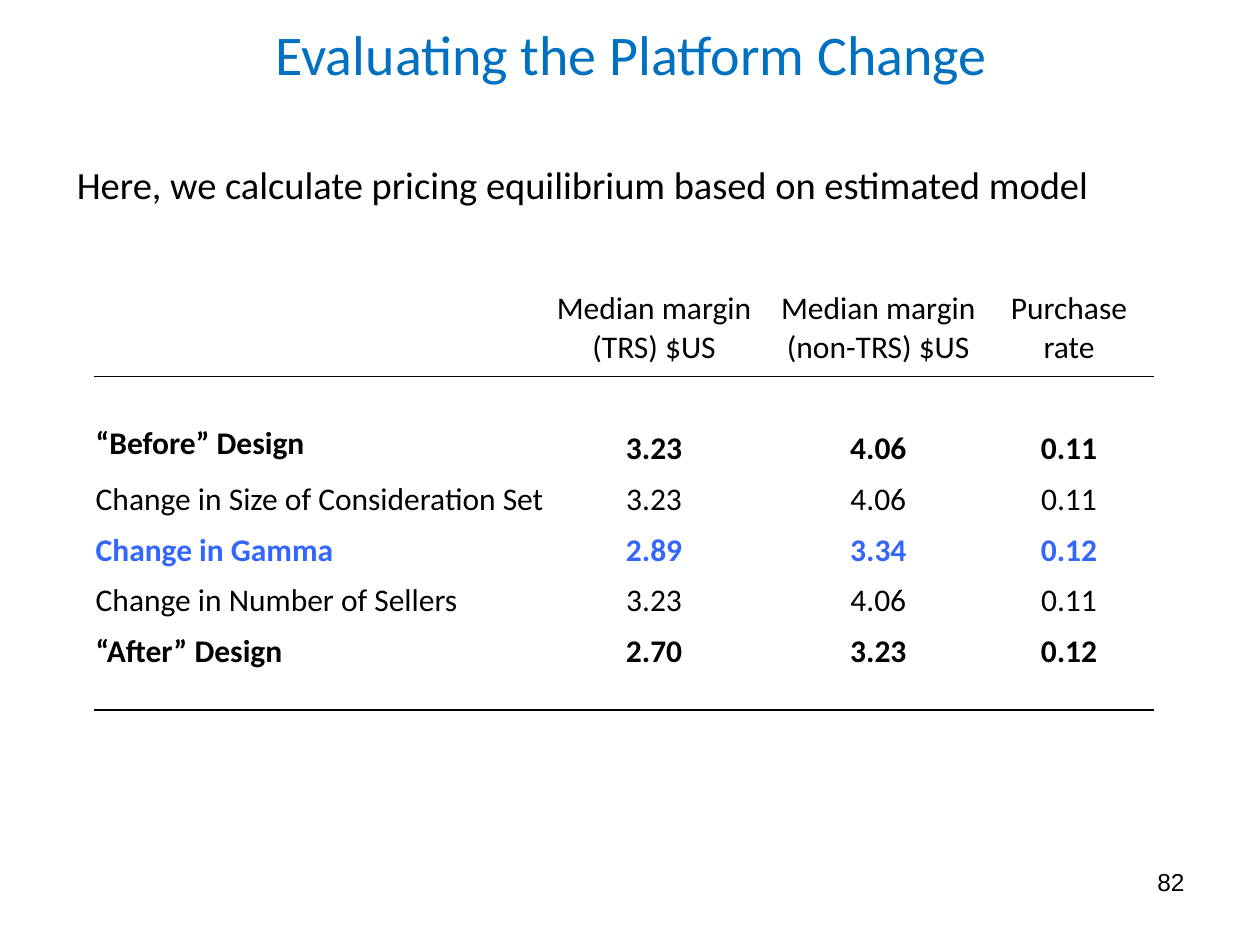
from lxml.etree import SubElement
from pptx import Presentation
from pptx.dml.color import RGBColor
from pptx.enum.text import MSO_ANCHOR, PP_ALIGN
from pptx.oxml.ns import qn
from pptx.util import Cm, Pt

BLACK, BLUE, TITLE_BLUE = "000000", "3366FF", "0070C0"
COLUMN_WIDTHS = [9.14, 4.29, 0.23, 4.29, 3.4]
ROW_HEIGHTS = [1.98, 0.83] + [1.02] * 5 + [0.77]
HEADER = ["", "Median margin (TRS) $US", "", "Median margin\n(non-TRS) $US", "Purchase\nrate"]
DESIGNS = [
    ("“Before” Design", "3.23", "4.06", "0.11", BLACK, True),
    ("Change in Size of Consideration Set", "3.23", "4.06", "0.11", BLACK, False),
    ("Change in Gamma", "2.89", "3.34", "0.12", BLUE, True),
    ("Change in Number of Sellers", "3.23", "4.06", "0.11", BLACK, False),
    ("“After” Design", "2.70", "3.23", "0.12", BLACK, True),
]


def color(value):
    return RGBColor.from_string(value)


class SlideBuilder:
    """Holds the font style and the current slide, and adds elements to it."""

    def __init__(self, slide, font_name):
        self.slide = slide
        self.font_name = font_name

    def fill_text(self, frame, text, size, ink=BLACK, align=PP_ALIGN.LEFT, bold=False, font_name=None):
        frame.text = text
        for paragraph in frame.paragraphs:
            paragraph.alignment = align
            font = paragraph.font
            font.name = font_name or self.font_name
            font.size = Pt(size)
            font.bold = bold
            font.color.rgb = color(ink)

    def text(self, box, text, size, anchor=MSO_ANCHOR.TOP, wrap=True, **style):
        shape = self.slide.shapes.add_textbox(*map(Cm, box))
        shape.text_frame.word_wrap = wrap
        shape.text_frame.vertical_anchor = anchor
        self.fill_text(shape.text_frame, text, size, **style)

    def table(self, left, top, widths, heights):
        table = self.slide.shapes.add_table(
            len(heights), len(widths), Cm(left), Cm(top), Cm(sum(widths)), Cm(sum(heights))
        ).table
        table.first_row = table.horz_banding = False
        for column, width in zip(table.columns, widths):
            column.width = Cm(width)
        for row, height in zip(table.rows, heights):
            row.height = Cm(height)
        for cell in table.iter_cells():
            cell.margin_left = cell.margin_right = cell.margin_top = Cm(0.03)
            cell.margin_bottom = 0
            self.fill_text(cell.text_frame, "", 18)
        return table

    def cell(self, cell, text, anchor, **style):
        cell.vertical_anchor = anchor
        self.fill_text(cell.text_frame, text, 18, **style)

    def rule(self, row, side):
        for cell in row.cells:
            border = SubElement(cell._tc.get_or_add_tcPr(), qn(f"a:{side}"), w=str(Pt(1)))
            fill = SubElement(border, qn("a:solidFill"))
            SubElement(fill, qn("a:srgbClr"), val=BLACK)

    def margin_table(self):
        table = self.table(1.9, 5.61, COLUMN_WIDTHS, ROW_HEIGHTS)
        for column, text in enumerate(HEADER):
            if text:
                self.cell(table.cell(0, column), text, MSO_ANCHOR.MIDDLE, align=PP_ALIGN.CENTER)
        for row, (name, *values, ink, bold) in enumerate(DESIGNS, 2):
            anchor = MSO_ANCHOR.MIDDLE if row == 2 else MSO_ANCHOR.BOTTOM
            self.cell(table.cell(row, 0), name, anchor, ink=ink, bold=bold)
            for column, value in zip((1, 3, 4), values):
                self.cell(table.cell(row, column), value, MSO_ANCHOR.BOTTOM,
                          ink=ink, bold=bold, align=PP_ALIGN.CENTER)
        for row, side in ((0, "lnB"), (1, "lnT"), (7, "lnB")):
            self.rule(table.rows[row], side)
        for cell in table.iter_cells():
            cell.fill.background()


def main():
    presentation = Presentation()
    presentation.slide_width, presentation.slide_height = Cm(25.4), Cm(19.05)
    slide = presentation.slides.add_slide(presentation.slide_layouts[6])
    builder = SlideBuilder(slide, "Calibri")
    builder.text((1.3, 0, 22.86, 2.13), "Evaluating the Platform Change", 32,
                 anchor=MSO_ANCHOR.MIDDLE, ink=TITLE_BLUE, align=PP_ALIGN.CENTER)
    builder.text((18.21, 17.35, 5.92, 1.32), "82", 14, align=PP_ALIGN.RIGHT, font_name="Arial")
    builder.margin_table()
    builder.text((1.3, 3.12, 21.31, 1.19),
                 "Here, we calculate pricing equilibrium based on estimated model", 22, wrap=False)
    presentation.save("out.pptx")


if __name__ == "__main__":
    main()
